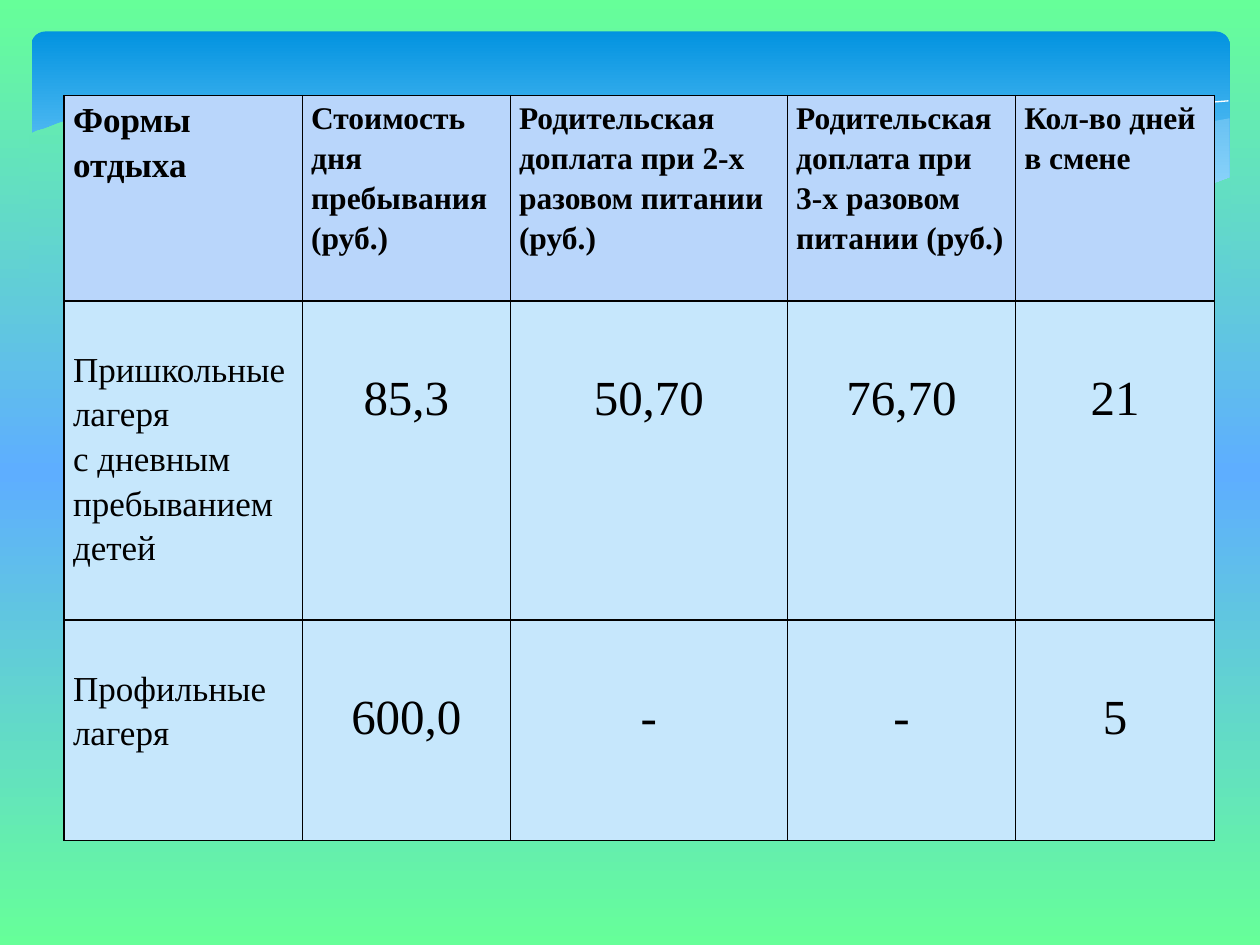
from dataclasses import dataclass

from lxml import etree
from pptx import Presentation
from pptx.dml.color import RGBColor
from pptx.enum.shapes import MSO_SHAPE
from pptx.enum.text import MSO_ANCHOR, PP_ALIGN
from pptx.oxml.ns import qn
from pptx.util import Inches, Pt

ROUND = MSO_SHAPE.ROUNDED_RECTANGLE
TOP = MSO_ANCHOR.TOP
LEFT, CENTER = PP_ALIGN.LEFT, PP_ALIGN.CENTER

# The slide is a grid of 1000 columns by 750 rows.
COLS, ROWS = 1000, 750
WIDTH, HEIGHT = Inches(10), Inches(7.5)
UNIT = WIDTH / COLS


@dataclass(frozen=True)
class Theme:
    font: str = "Times New Roman"
    ink: str = "000000"
    white: str = "FFFFFF"
    head: str = "B9D6FB"
    body: str = "C6E7FC"
    page: tuple = ((0, "66FF99"), (50, "5EAEFF"), (100, "66FF99"))
    band: tuple = ((0, "0293E0"), (90, "83D3FE"))
    wave: tuple = ((0, "64EEAE"), (100, "61CFD6"))  # page tones at its height
    small: int = 18
    mid: int = 20
    big: int = 28
    lead: float = 1.15


def size(units):
    return round(units * UNIT)


def shade(fill, root, stops):
    """Fill from top to bottom with any number of (percent, colour) stops."""
    fill.gradient()
    fill.gradient_angle = 270
    bar = next(root.iter(qn("a:gsLst")))
    for stop in list(bar):
        bar.remove(stop)
    for pos, color in stops:
        stop = etree.SubElement(bar, qn("a:gs"), pos=str(pos * 1000))
        etree.SubElement(stop, qn("a:srgbClr"), val=color)


def write(frame, text, font, color, points, bold=False, align=LEFT, lead=1.0):
    frame.word_wrap = True
    for i, line in enumerate(text.split("\n")):
        para = frame.add_paragraph() if i else frame.paragraphs[0]
        para.alignment, para.line_spacing = align, lead
        run = para.add_run()
        run.text = line
        run.font.name, run.font.size, run.font.bold = font, Pt(points), bold
        run.font.color.rgb = RGBColor.from_string(color)


def frame_cell(cell, color):
    props = cell._tc.get_or_add_tcPr()
    for side in ("lnL", "lnR", "lnT", "lnB"):
        edge = etree.SubElement(props, qn(f"a:{side}"), w=str(Pt(1)))
        paint = etree.SubElement(edge, qn("a:solidFill"))
        etree.SubElement(paint, qn("a:srgbClr"), val=color)


class Page:
    def __init__(self, deck, theme):
        self.theme = theme
        self.slide = deck.slides.add_slide(deck.slide_layouts[6])
        self.shapes = self.slide.shapes
        shade(self.slide.background.fill, self.slide._element, theme.page)

    def band(self, x, y, w, h, bend, stops):
        shape = self.shapes.add_shape(ROUND, *map(size, (x, y, w, h)))
        shape.adjustments[0] = bend
        shape.shadow.inherit = False
        shape.line.fill.background()
        shade(shape.fill, shape._element.spPr, stops)

    def curve(self, points, closed=True):
        pen = self.shapes.build_freeform(*points[0], scale=UNIT)
        pen.add_line_segments(points[1:], close=closed)
        shape = pen.convert_to_shape()
        shape.shadow.inherit = False
        return shape

    def veil(self, points, alpha):
        """Draw a see-through wave; alpha is its opacity in percent."""
        shape = self.curve(points)
        shape.line.fill.background()
        shape.fill.solid()
        shape.fill.fore_color.rgb = RGBColor.from_string(self.theme.body)
        tone = next(shape._element.spPr.iter(qn("a:srgbClr")))
        etree.SubElement(tone, qn("a:alpha"), val=str(alpha * 1000))

    def wave(self, points, stops):
        shape = self.curve(points)
        shape.line.fill.background()
        shade(shape.fill, shape._element.spPr, stops)

    def thread(self, points):
        shape = self.curve(points, closed=False)
        shape.fill.background()
        shape.line.width = 0
        shape.line.color.rgb = RGBColor.from_string(self.theme.white)

    def table(self, x, y, widths, heights, data):
        look = self.theme
        box = (x, y, sum(widths), sum(heights))
        grid = self.shapes.add_table(len(heights), len(widths), *map(size, box)).table
        for col, wide in zip(grid.columns, widths):
            col.width = size(wide)
        for row, high in zip(grid.rows, heights):
            row.height = size(high)
        for r, line in enumerate(data):
            for c, text in enumerate(line):
                head, label = r == 0, c == 0
                points = look.mid if label else look.small if head else look.big
                drop = 0 if head else 35 if label else 50
                cell = grid.cell(r, c)
                cell.margin_left = cell.margin_right = size(7)
                cell.margin_top, cell.margin_bottom = size(drop), 0
                cell.vertical_anchor = TOP
                frame_cell(cell, look.ink)
                cell.fill.solid()
                cell.fill.fore_color.rgb = RGBColor.from_string(look.head if head else look.body)
                write(cell.text_frame, text, look.font, look.ink, points, bold=head,
                      align=LEFT if head or label else CENTER, lead=look.lead)


RIGHT_VEIL = [
    (975, 94), (948, 99), (921, 104), (891, 110), (861, 118), (805, 131), (753, 143),
    (706, 152), (661, 160), (691, 164), (732, 168), (769, 171), (803, 172), (835, 172),
    (863, 170), (889, 166), (913, 162), (935, 156), (963, 147), (976, 141), (976, 94)]
LONG_VEIL = [
    (893, 167), (837, 160), (775, 149), (706, 134), (629, 116), (584, 106), (541, 97),
    (501, 91), (442, 83), (380, 80), (328, 81), (286, 86), (342, 94), (404, 106),
    (449, 116), (530, 135), (601, 150), (665, 161), (722, 168), (773, 172), (818, 173),
    (857, 171)]
LONG_THREAD = [
    (309, 90), (328, 86), (363, 83), (416, 81), (469, 83), (533, 88), (582, 94),
    (636, 102), (695, 114), (760, 128), (831, 145), (907, 166)]
RIGHT_THREAD = [
    (613, 151), (672, 135), (748, 117), (806, 104), (866, 93), (910, 86), (951, 82), (975, 80)]
WAVE = [
    (977, 141), (950, 151), (920, 159), (887, 166), (850, 170), (809, 171), (761, 170),
    (708, 165), (647, 156), (579, 144), (503, 128), (447, 114), (391, 102), (339, 92),
    (292, 85), (250, 81), (211, 78), (177, 78), (146, 79), (119, 82), (95, 85), (75, 89),
    (59, 94), (46, 98), (36, 102), (29, 104), (23, 107), (23, 224), (977, 224)]

CAMPS = [
    ["Формы отдыха", "Стоимость дня пребывания (руб.)",
     "Родительская доплата при 2-х разовом питании (руб.)",
     "Родительская доплата при\n3-х разовом питании (руб.)", "Кол-во дней в смене"],
    ["Пришкольные лагеря\nс дневным пребыванием детей", "85,3", "50,70", "76,70", "21"],
    ["Профильные лагеря", "600,0", "-", "-", "5"]]


def main():
    deck = Presentation()
    deck.slide_width, deck.slide_height = WIDTH, HEIGHT
    theme = Theme()
    page = Page(deck, theme)
    page.band(25, 25, COLS - 49, 156, 0.07, theme.band)
    page.veil(RIGHT_VEIL, 29)
    page.veil(LONG_VEIL, 40)
    page.thread(LONG_THREAD)
    page.thread(RIGHT_THREAD)
    page.wave(WAVE, theme.wave)
    page.table(51, 76, (189, 165, 220, 181, 158), (163, 253, 175), CAMPS)
    deck.save("out.pptx")


if __name__ == "__main__":
    main()
